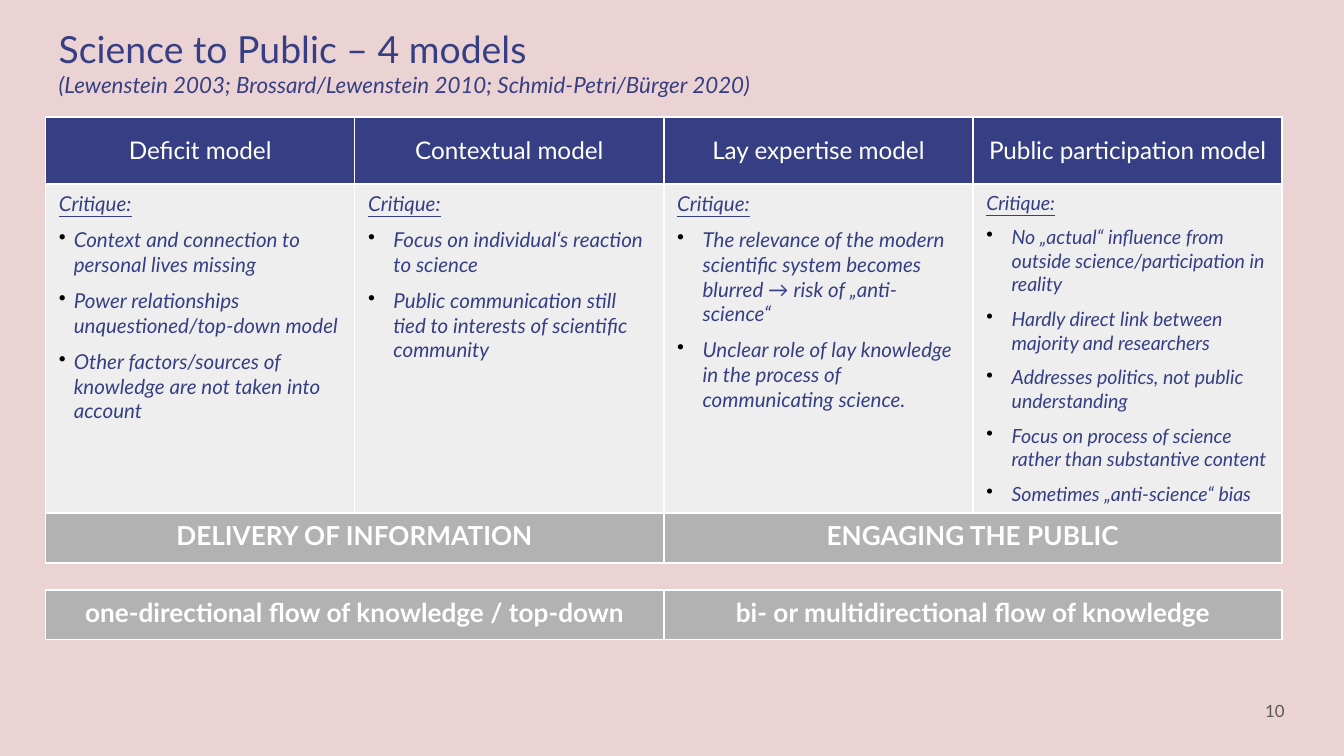
from dataclasses import dataclass

from pptx import Presentation
from pptx.dml.color import RGBColor
from pptx.enum.text import MSO_ANCHOR, MSO_AUTO_SIZE, PP_ALIGN
from pptx.oxml import parse_xml
from pptx.oxml.ns import nsdecls
from pptx.util import Cm, Pt


@dataclass(frozen=True)
class Theme:
    font: str = "Lato"
    background: str = "EBD3D3"
    navy: str = "363F83"
    white: str = "FFFFFF"
    pale: str = "EEEEEE"
    gray: str = "B2B2B2"
    number: str = "595959"
    bullet: str = "000000"
    title_size: float = 20
    source_size: float = 12
    header_size: float = 13
    critique_size: float = 11
    dense_size: float = 10.5
    band_size: float = 14
    number_size: float = 9


theme = Theme()


def add_run(paragraph, text, size, color, bold=False, italic=False, underline=False):
    run = paragraph.add_run()
    run.text = text
    font = run.font
    font.name, font.size = theme.font, Pt(size)
    font.bold, font.italic, font.underline = bold, italic, underline
    font.color.rgb = RGBColor.from_string(color)


def style_cell(cell, fill):
    for side in "LRTB":
        cell._tc.get_or_add_tcPr().append(parse_xml(
            f'<a:ln{side} {nsdecls("a")} w="{Pt(1)}"><a:solidFill>'
            f'<a:srgbClr val="{theme.white}"/></a:solidFill></a:ln{side}>'))
    cell.fill.solid()
    cell.fill.fore_color.rgb = RGBColor.from_string(fill)


# Each model: name, bullet indent in cm, type size, points of critique
models = [
    ("Deficit model", 0.28, theme.critique_size, [
        "Context and connection to personal lives missing",
        "Power relationships unquestioned/top-down model",
        "Other factors/sources of knowledge are not taken into account"]),
    ("Contextual model", 0.48, theme.critique_size, [
        "Focus on individual‘s reaction to science",
        "Public communication still tied to interests of scientific community"]),
    ("Lay expertise model", 0.48, theme.critique_size, [
        "The relevance of the modern scientific system becomes blurred → risk of „anti-science“",
        "Unclear role of lay knowledge in the process of communicating science."]),
    ("Public participation model", 0.48, theme.dense_size, [
        "No „actual“ influence from outside science/participation in reality",
        "Hardly direct link between majority and researchers",
        "Addresses politics, not public understanding",
        "Focus on process of science rather than substantive content",
        "Sometimes „anti-science“ bias"]),
]
purposes = ["DELIVERY OF INFORMATION", "ENGAGING THE PUBLIC"]
flows = ["one-directional flow of knowledge / top-down",
         "bi- or multidirectional flow of knowledge"]

deck = Presentation()
deck.slide_width, deck.slide_height = Cm(25.4), Cm(14.29)
slide = deck.slides.add_slide(deck.slide_layouts[5])
slide.background.fill.solid()
slide.background.fill.fore_color.rgb = RGBColor.from_string(theme.background)

left, width, band_height = Cm(0.86), Cm(23.37), Cm(0.94)

# Title with its sources
title = slide.shapes.title
title.left, title.top, title.width, title.height = left, Cm(0.25), Cm(18.9), Cm(1.6)
number = slide.shapes.add_textbox(Cm(23.01), Cm(12.9), Cm(1.52), Cm(1.09))
for box, anchor in ((title, MSO_ANCHOR.TOP), (number, MSO_ANCHOR.MIDDLE)):
    frame = box.text_frame
    frame.word_wrap, frame.auto_size = True, MSO_AUTO_SIZE.NONE
    frame.vertical_anchor = anchor
    frame.margin_left = frame.margin_right = Cm(0.25)
    frame.margin_top = frame.margin_bottom = Cm(0.25)

heading = title.text_frame.paragraphs[0]
heading.alignment = PP_ALIGN.LEFT
add_run(heading, "Science to Public – 4 models", theme.title_size, theme.navy)
heading.add_line_break()
add_run(heading, "(Lewenstein 2003; Brossard/Lewenstein 2010; Schmid-Petri/Bürger 2020)",
        theme.source_size, theme.navy, italic=True)

# Slide number
page = number.text_frame.paragraphs[0]
page.alignment = PP_ALIGN.RIGHT
add_run(page, "10", theme.number_size, theme.number)

# Tables of models and of knowledge flows
row_heights = [Cm(1.27), Cm(6.22), band_height]
model_table = slide.shapes.add_table(
    3, len(models), left, Cm(2.21), width, sum(row_heights)).table
flow_table = slide.shapes.add_table(
    1, len(flows), left, Cm(11.15), width, band_height).table
for row, height in zip(model_table.rows, row_heights):
    row.height = height
for table in (model_table, flow_table):
    table.first_row = table.horz_banding = False

# Model names and critiques
for column, (name, indent, size, points) in enumerate(models):
    header, critique = model_table.cell(0, column), model_table.cell(1, column)
    style_cell(header, theme.navy)
    style_cell(critique, theme.pale)
    style_cell(model_table.cell(2, column), theme.gray)

    header.vertical_anchor = MSO_ANCHOR.MIDDLE
    label = header.text_frame.paragraphs[0]
    label.alignment = PP_ALIGN.CENTER
    add_run(label, name, theme.header_size, theme.white)

    lead = critique.text_frame.paragraphs[0]
    lead.space_after = Pt(6)
    add_run(lead, "Critique:", size, theme.navy, italic=True, underline=True)
    for point in points:
        item = critique.text_frame.add_paragraph()
        props = item._p.get_or_add_pPr()
        props.set("marL", str(Cm(indent)))
        props.set("indent", str(-Cm(indent)))
        props.append(parse_xml(f'<a:buClr {nsdecls("a")}><a:srgbClr val="{theme.bullet}"/></a:buClr>'))
        props.append(parse_xml(f'<a:buChar {nsdecls("a")} char="•"/>'))
        item.space_after = Pt(6)
        add_run(item, point, size, theme.navy, italic=True)

# Gray bands, each spanning two models
for half, (purpose, flow) in enumerate(zip(purposes, flows)):
    purpose_cell, flow_cell = model_table.cell(2, 2 * half), flow_table.cell(0, half)
    purpose_cell.merge(model_table.cell(2, 2 * half + 1))
    style_cell(flow_cell, theme.gray)
    for cell, text in ((purpose_cell, purpose), (flow_cell, flow)):
        band = cell.text_frame.paragraphs[0]
        band.alignment = PP_ALIGN.CENTER
        band.space_after = Pt(6)
        add_run(band, text, theme.band_size, theme.white, bold=True)

deck.save("out.pptx")
